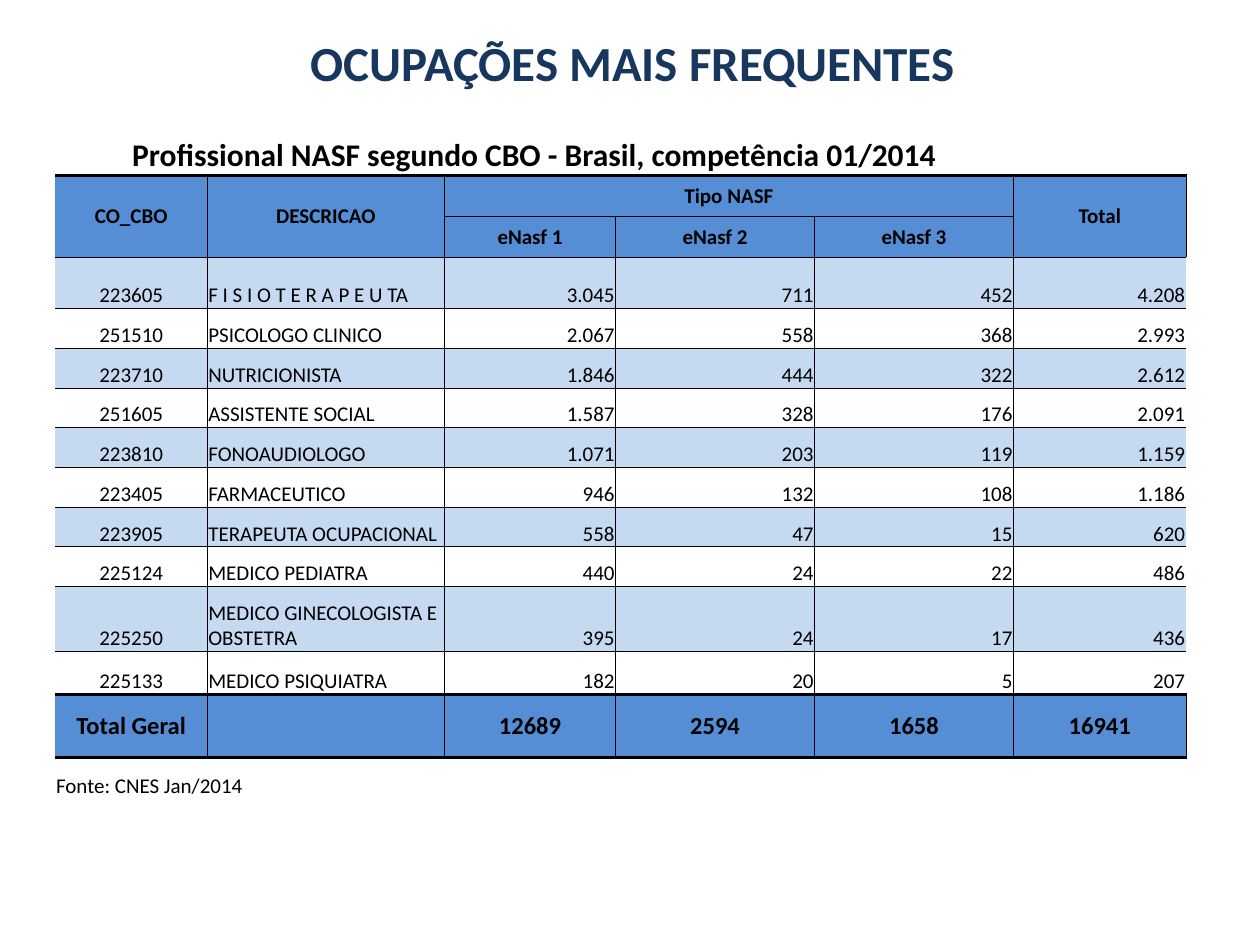
from lxml.etree import SubElement
from pptx import Presentation
from pptx.dml.color import RGBColor
from pptx.enum.text import MSO_ANCHOR as Anchor, PP_ALIGN as Align
from pptx.oxml.ns import qn
from pptx.util import Cm, Pt

NAVY, BLUE, PALE, WHITE, BLACK = "17375E", "558ED5", "C5D9F1", "FFFFFF", "000000"
NO_STYLE = "{2D5ABB26-0587-4C30-8999-92F81FD0307C}"
COLUMNS = [3.07, 4.78, 3.45, 4.01, 4.01, 3.48]
HEIGHTS = [1.8, 0.84, 0.81, 1.04] + [0.8] * 7 + [1.31, 0.87, 1.27, 0.84]
HEADING = "Profissional NASF segundo CBO - Brasil, competência 01/2014"
HEADERS = [
    ["CO_CBO", "DESCRICAO", "Tipo NASF", "", "", "Total"],
    ["", "", "eNasf 1", "eNasf 2", "eNasf 3", ""],
]
OCCUPATIONS = [
    ["223605", "F I S I O T E R A P E U TA", "3.045", "711", "452", "4.208"],
    ["251510", "PSICOLOGO CLINICO", "2.067", "558", "368", "2.993"],
    ["223710", "NUTRICIONISTA", "1.846", "444", "322", "2.612"],
    ["251605", "ASSISTENTE SOCIAL", "1.587", "328", "176", "2.091"],
    ["223810", "FONOAUDIOLOGO", "1.071", "203", "119", "1.159"],
    ["223405", "FARMACEUTICO", "946", "132", "108", "1.186"],
    ["223905", "TERAPEUTA OCUPACIONAL", "558", "47", "15", "620"],
    ["225124", "MEDICO PEDIATRA", "440", "24", "22", "486"],
    ["225250", "MEDICO GINECOLOGISTA E OBSTETRA", "395", "24", "17", "436"],
    ["225133", "MEDICO PSIQUIATRA", "182", "20", "5", "207"],
]
TOTALS = ["Total Geral", "", "12689", "2594", "1658", "16941"]
SOURCE = "Fonte: CNES Jan/2014"
MERGES = [(0, 0, 0, 4), (1, 0, 2, 0), (1, 1, 2, 1), (1, 2, 1, 4), (1, 5, 2, 5), (14, 0, 14, 1)]
BODY_ALIGN = [Align.CENTER, Align.LEFT] + [Align.RIGHT] * 4


def rgb(value):
    return RGBColor.from_string(value)


class Deck:
    """Holds the style and the current slide, and draws each kind of element."""

    font = "Calibri"

    def __init__(self):
        self.prs = Presentation()
        self.prs.slide_width, self.prs.slide_height = Cm(25.4), Cm(19.05)
        self.s = self.prs.slides.add_slide(self.prs.slide_layouts[6])

    def set_text(self, tf, text, size, color=BLACK, bold=False, align=Align.CENTER):
        p = tf.paragraphs[0]
        p.text, p.alignment = text, align
        p.font.name, p.font.size, p.font.bold = self.font, Pt(size), bold
        p.font.color.rgb = rgb(color)

    def text(self, x, y, w, h, text, size, color, bold):
        tf = self.s.shapes.add_textbox(Cm(x), Cm(y), Cm(w), Cm(h)).text_frame
        tf.word_wrap = True
        self.set_text(tf, text, size, color, bold)

    def table(self, x, y, widths, heights, merges):
        frame = self.s.shapes.add_table(
            len(heights), len(widths), Cm(x), Cm(y), Cm(sum(widths)), Cm(sum(heights)))
        table = frame.table
        table.first_row = table.horz_banding = False
        table._tbl.tblPr.find(qn("a:tableStyleId")).text = NO_STYLE
        for column, width in zip(table.columns, widths):
            column.width = Cm(width)
        for row, height in zip(table.rows, heights):
            row.height = Cm(height)
        for top, left, bottom, right in merges:
            table.cell(top, left).merge(table.cell(bottom, right))
        return table

    def cell(self, cell, text, size, bold, align, anchor, fill, borders):
        cell.margin_left = cell.margin_right = cell.margin_top = Cm(0.02)
        cell.margin_bottom = 0
        cell.vertical_anchor = anchor
        self.set_text(cell.text_frame, text, size, bold=bold, align=align)
        tcPr = cell._tc.get_or_add_tcPr()
        for side in "LRTB":
            if side in borders:
                ln = SubElement(tcPr, qn(f"a:ln{side}"), w=str(Pt(borders[side])))
                SubElement(SubElement(ln, qn("a:solidFill")), qn("a:srgbClr"), val=BLACK)
        if fill:
            cell.fill.solid()
            cell.fill.fore_color.rgb = rgb(fill)
        else:
            cell.fill.background()


def borders_at(row, col, last_row, last_col):
    total = last_row - 1
    if row == 0:
        return {"B": 2}
    if row == last_row:
        return {"T": 2}
    sides = {"T": 2 if row in (1, total) else 0.5, "B": 2 if row >= total - 1 else 0.5}
    if col > 0:
        sides["L"] = 0.5
    if col < last_col or row == total:
        sides["R"] = 0.5
    return sides


def main():
    deck = Deck()
    deck.text(0.05, 0.53, 25.4, 1.45, "OCUPAÇÕES MAIS FREQUENTES", 28, NAVY, True)

    blanks = [""] * (len(COLUMNS) - 1)
    rows = [[HEADING, *blanks], *HEADERS, *OCCUPATIONS, TOTALS, [SOURCE, *blanks]]
    last_row, last_col = len(rows) - 1, len(COLUMNS) - 1
    table = deck.table(1.11, 1.73, COLUMNS, HEIGHTS, MERGES)
    for i, values in enumerate(rows):
        for j, value in enumerate(values):
            cell = table.cell(i, j)
            size, bold, align, anchor = 12, True, Align.CENTER, Anchor.MIDDLE
            fill = BLUE
            if i == 0:
                size, anchor, fill = 18, Anchor.BOTTOM, None
            elif i == last_row:
                bold, align, anchor, fill = False, Align.LEFT, Anchor.BOTTOM, None
            elif i == last_row - 1:
                size = 14
            elif i > len(HEADERS):
                bold, align, anchor = False, BODY_ALIGN[j], Anchor.BOTTOM
                fill = PALE if i % 2 else WHITE
            hidden = cell.is_spanned and 0 < i < last_row
            borders = {} if hidden else borders_at(i, j, last_row, last_col)
            deck.cell(cell, value, size, bold, align, anchor, fill, borders)
    deck.prs.save("out.pptx")


if __name__ == "__main__":
    main()
